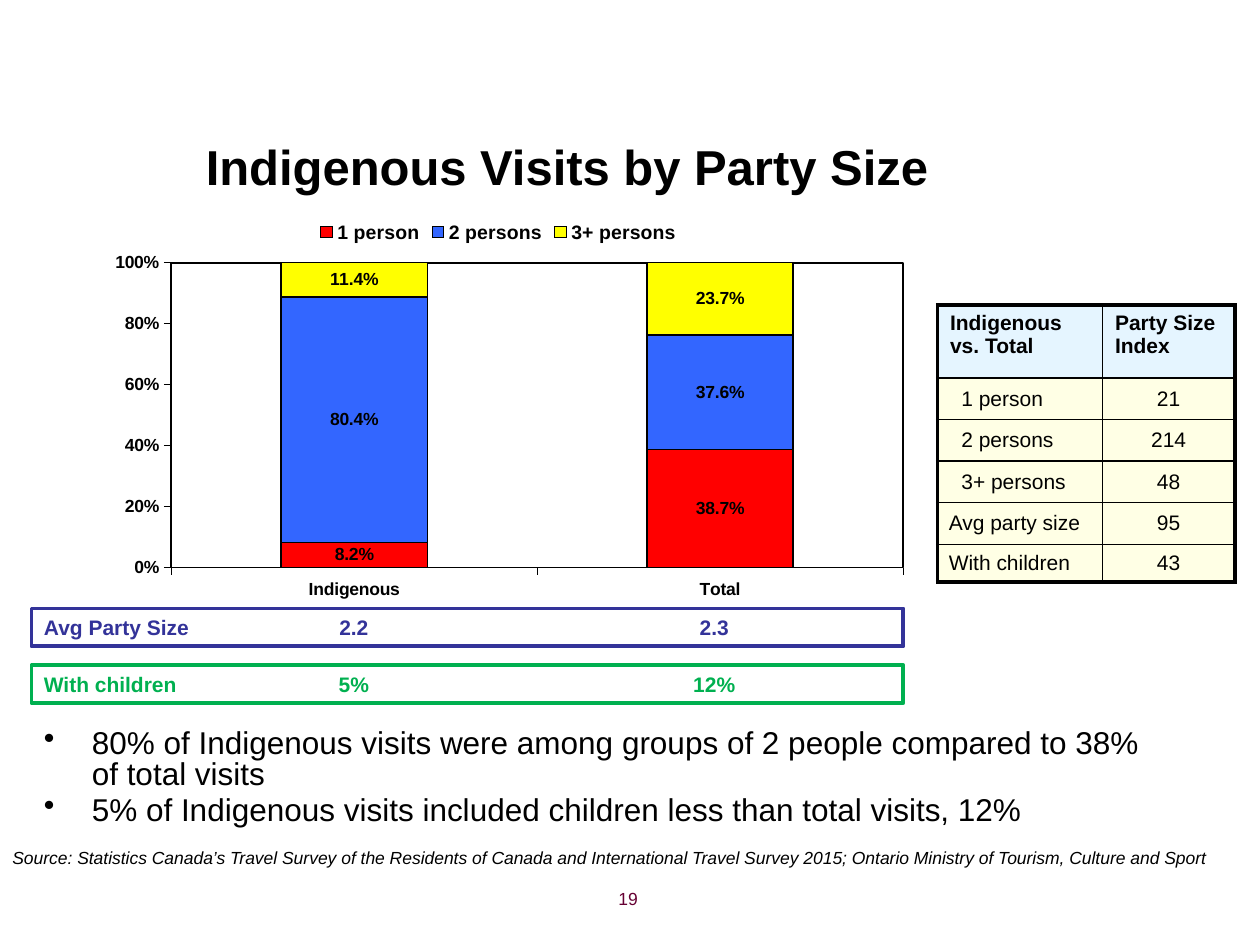
from typing import NamedTuple

import lxml.etree
import pptx
import pptx.chart.data
import pptx.dml.color
import pptx.enum.chart
import pptx.enum.shapes
import pptx.enum.text
import pptx.oxml
import pptx.oxml.ns
import pptx.util

RGBColor = pptx.dml.color.RGBColor
Align = pptx.enum.text.PP_ALIGN
Anchor = pptx.enum.text.MSO_ANCHOR
qn = pptx.oxml.ns.qn
Pt = pptx.util.Pt

BLACK = RGBColor(0x00, 0x00, 0x00)
WHITE = RGBColor(0xFF, 0xFF, 0xFF)
RED = RGBColor(0xFF, 0x00, 0x00)
BLUE = RGBColor(0x33, 0x66, 0xFF)
YELLOW = RGBColor(0xFF, 0xFF, 0x00)
INDIGO = RGBColor(0x33, 0x33, 0x99)
GREEN = RGBColor(0x00, 0xB0, 0x50)
MAROON = RGBColor(0x66, 0x00, 0x33)
SKY = RGBColor(0xCC, 0xEC, 0xFF)
CREAM = RGBColor(0xFF, 0xFF, 0xCC)

FONT = "Arial"
COLUMNS, ROWS = 100, 75
WIDTH, HEIGHT = pptx.util.Inches(10), pptx.util.Inches(7.5)


class Frame(NamedTuple):
    column: float
    row: float
    columns: float
    rows: float


class PartySize(NamedTuple):
    name: str
    shares: tuple[float, float]
    color: RGBColor


class Measure(NamedTuple):
    row: float
    cells: tuple[str, str, str]
    color: RGBColor


class IndexRow(NamedTuple):
    label: str
    index: str
    rows: float
    indent: float = 0.9


PARTY_SIZES = [
    PartySize("1 person", (0.082, 0.387), RED),
    PartySize("2 persons", (0.804, 0.376), BLUE),
    PartySize("3+ persons", (0.114, 0.237), YELLOW),
]
MEASURES = [
    Measure(48.3, ("Avg Party Size", "2.2", "2.3"), INDIGO),
    Measure(52.8, ("With children", "5%", "12%"), GREEN),
]
INDEX_ROWS = [
    IndexRow("Indigenous vs. Total", "Party Size Index", 5.8, 1),
    IndexRow("1 person", "21", 3.3, 1.9),
    IndexRow("2 persons", "214", 3.3, 1.9),
    IndexRow("3+ persons", "48", 3.3, 1.9),
    IndexRow("Avg party size", "95", 3.3),
    IndexRow("With children", "43", 3.0),
]
FINDINGS = [
    "80% of Indigenous visits were among groups of 2 people compared to 38% of total visits",
    "5% of Indigenous visits included children less than total visits, 12%",
]
SOURCE = (
    "Source: Statistics Canada’s Travel Survey of the Residents of Canada and "
    "International Travel Survey 2015; Ontario Ministry of Tourism, Culture and Sport"
)


def across(columns: float) -> int:
    return round(WIDTH * columns / COLUMNS)


def down(rows: float) -> int:
    return round(HEIGHT * rows / ROWS)


def place(frame: Frame) -> tuple[int, int, int, int]:
    return across(frame.column), down(frame.row), across(frame.columns), down(frame.rows)


def style_font(font, size: float, color=BLACK, bold=False, italic=False) -> None:
    font.name, font.size = FONT, Pt(size)
    font.bold, font.italic = bold, italic
    font.color.rgb = color


def write(para, text: str, *, size: float, color=BLACK, bold=False, italic=False,
          align=Align.LEFT, before=0, spacing=None, bullet=False, tabs=()) -> None:
    para.alignment = align
    para.space_before = Pt(before)
    if spacing:
        para.line_spacing = spacing
    properties = para._p.get_or_add_pPr()
    if bullet:
        properties.set("marL", str(across(3.8)))
        properties.set("indent", str(-across(3.8)))
        lxml.etree.SubElement(properties, qn("a:buChar"), char="•")
    if tabs:
        stops = lxml.etree.SubElement(properties, qn("a:tabLst"))
        for stop in tabs:
            lxml.etree.SubElement(stops, qn("a:tab"), pos=str(across(stop)), algn="ctr")
    span = para.add_run()
    span.text = text
    style_font(span.font, size, color, bold, italic)


def add_text(page, frame: Frame, texts: list[str], *, anchor=Anchor.TOP,
             before=0, **style) -> None:
    box = page.shapes.add_textbox(*place(frame))
    box.text_frame.word_wrap = True
    box.text_frame.vertical_anchor = anchor
    for number, text in enumerate(texts):
        para = box.text_frame.add_paragraph() if number else box.text_frame.paragraphs[0]
        write(para, text, before=before if number else 0, **style)


def add_measure(page, measure: Measure) -> None:
    box = page.shapes.add_shape(
        pptx.enum.shapes.MSO_SHAPE.RECTANGLE, *place(Frame(2.5, measure.row, 69.2, 3)))
    box.shadow.inherit = False
    box.fill.background()
    box.line.color.rgb = measure.color
    box.line.width = Pt(2.25)
    box.text_frame.word_wrap = True
    box.text_frame.vertical_anchor = Anchor.MIDDLE
    write(box.text_frame.paragraphs[0], "\t".join(measure.cells), size=12,
          color=measure.color, bold=True, tabs=(24.6, 53.2))


def add_party_chart(page) -> None:
    data = pptx.chart.data.CategoryChartData(number_format="0.0%")
    data.categories = ["Indigenous", "Total"]
    for party in PARTY_SIZES:
        data.add_series(party.name, party.shares)
    chart = page.shapes.add_chart(
        pptx.enum.chart.XL_CHART_TYPE.COLUMN_STACKED_100,
        *place(Frame(6.7, 16.4, 65.7, 38)), data).chart
    style_font(chart.font, 10, bold=True)
    chart.has_title = False
    chart.has_legend = True
    chart.legend.position = pptx.enum.chart.XL_LEGEND_POSITION.TOP
    chart.legend.include_in_layout = False
    style_font(chart.legend.font, 11.1, bold=True)
    for axis in (chart.category_axis, chart.value_axis):
        axis.has_major_gridlines = False
        axis.major_tick_mark = pptx.enum.chart.XL_TICK_MARK.OUTSIDE
        axis.format.line.color.rgb = BLACK
        axis.format.line.width = Pt(0.25)
        style_font(axis.tick_labels.font, 10, bold=True)
    chart.value_axis.minimum_scale, chart.value_axis.maximum_scale = 0, 1
    chart.value_axis.major_unit = 0.2
    chart.value_axis.tick_labels.number_format = "0%"
    chart.value_axis.tick_labels.number_format_is_linked = False
    plot = chart.plots[0]
    plot.gap_width, plot.overlap = 150, 100
    plot.vary_by_categories = False
    for series, party in zip(plot.series, PARTY_SIZES):
        series.format.fill.solid()
        series.format.fill.fore_color.rgb = party.color
        series.format.line.color.rgb = BLACK
        series.format.line.width = Pt(1)
        labels = series.data_labels
        labels.show_value = True
        labels.number_format, labels.number_format_is_linked = "0.0%", False
        style_font(labels.font, 10, bold=True)
    frame_plot(chart)


def frame_plot(chart) -> None:
    area = chart._chartSpace.chart.plotArea
    for layout in area.findall(qn("c:layout")):
        area.remove(layout)
    layout = lxml.etree.Element(qn("c:layout"))
    manual = lxml.etree.SubElement(layout, qn("c:manualLayout"))
    settings = dict(layoutTarget="inner", xMode="edge", yMode="edge",
                    x="0.105", y="0.117", w="0.884", h="0.637")
    for name, value in settings.items():
        lxml.etree.SubElement(manual, qn(f"c:{name}"), val=value)
    area.insert(0, layout)
    look = lxml.etree.SubElement(area, qn("c:spPr"))
    lxml.etree.SubElement(look, qn("a:noFill"))
    add_line(look, "ln", 1)


def add_line(parent, name: str, width: float):
    line = lxml.etree.SubElement(parent, qn(f"a:{name}"), w=str(Pt(width)))
    fill = lxml.etree.SubElement(line, qn("a:solidFill"))
    lxml.etree.SubElement(fill, qn("a:srgbClr"), val=str(BLACK))
    return line


def fill_cell(cell, color: RGBColor, thick_sides: set[str]) -> None:
    cell.fill.solid()
    cell.fill.fore_color.rgb = color
    properties = cell._tc.get_or_add_tcPr()
    shade = properties.find(f".//{qn('a:srgbClr')}")
    lxml.etree.SubElement(shade, qn("a:alpha"), val="50000")
    for place_in_order, side in enumerate("LRTB"):
        line = add_line(properties, f"ln{side}", 2.25 if side in thick_sides else 1)
        properties.insert(place_in_order, line)


def add_index_table(page) -> None:
    widths = (13.1, 10.5)
    frame = Frame(74.4, 24.2, sum(widths), sum(row.rows for row in INDEX_ROWS))
    table = page.shapes.add_table(len(INDEX_ROWS), len(widths), *place(frame)).table
    for column, width in zip(table.columns, widths):
        column.width = across(width)
    for number, row in enumerate(INDEX_ROWS):
        table.rows[number].height = down(row.rows)
        header = number == 0
        edges = {"T"} if header else {"B"} if number == len(INDEX_ROWS) - 1 else set()
        for position, text in enumerate((row.label, row.index)):
            cell = table.cell(number, position)
            cell.margin_left = across(row.indent if header or position == 0 else 0)
            cell.margin_right = across(1 if header else 0)
            cell.margin_top = cell.margin_bottom = down(0.5 if header else 0)
            cell.vertical_anchor = Anchor.TOP if header else Anchor.MIDDLE
            write(cell.text_frame.paragraphs[0], text, size=12, bold=header,
                  align=Align.CENTER if position and not header else Align.LEFT)
            fill_cell(cell, SKY if header else CREAM, edges | {"LR"[position]})


def main() -> None:
    deck = pptx.Presentation()
    deck.slide_width, deck.slide_height = WIDTH, HEIGHT
    page = deck.slides.add_slide(deck.slide_layouts[6])
    page.background.fill.solid()
    page.background.fill.fore_color.rgb = WHITE
    add_text(page, Frame(0, 9.7, 90, 6.9), ["Indigenous Visits by Party Size"],
             anchor=Anchor.MIDDLE, size=28, bold=True, align=Align.CENTER)
    add_text(page, Frame(2.5, 57.5, 89.8, 7.5), FINDINGS,
             size=18, before=3.6, spacing=0.8, bullet=True)
    add_party_chart(page)
    add_index_table(page)
    add_text(page, Frame(28.3, 70, 23.3, 3.5), ["19"],
             size=10, color=MAROON, align=Align.RIGHT)
    add_text(page, Frame(0, 66.7, 98, 2.7), [SOURCE], size=10, italic=True)
    for measure in MEASURES:
        add_measure(page, measure)
    deck.save("out.pptx")


if __name__ == "__main__":
    main()
